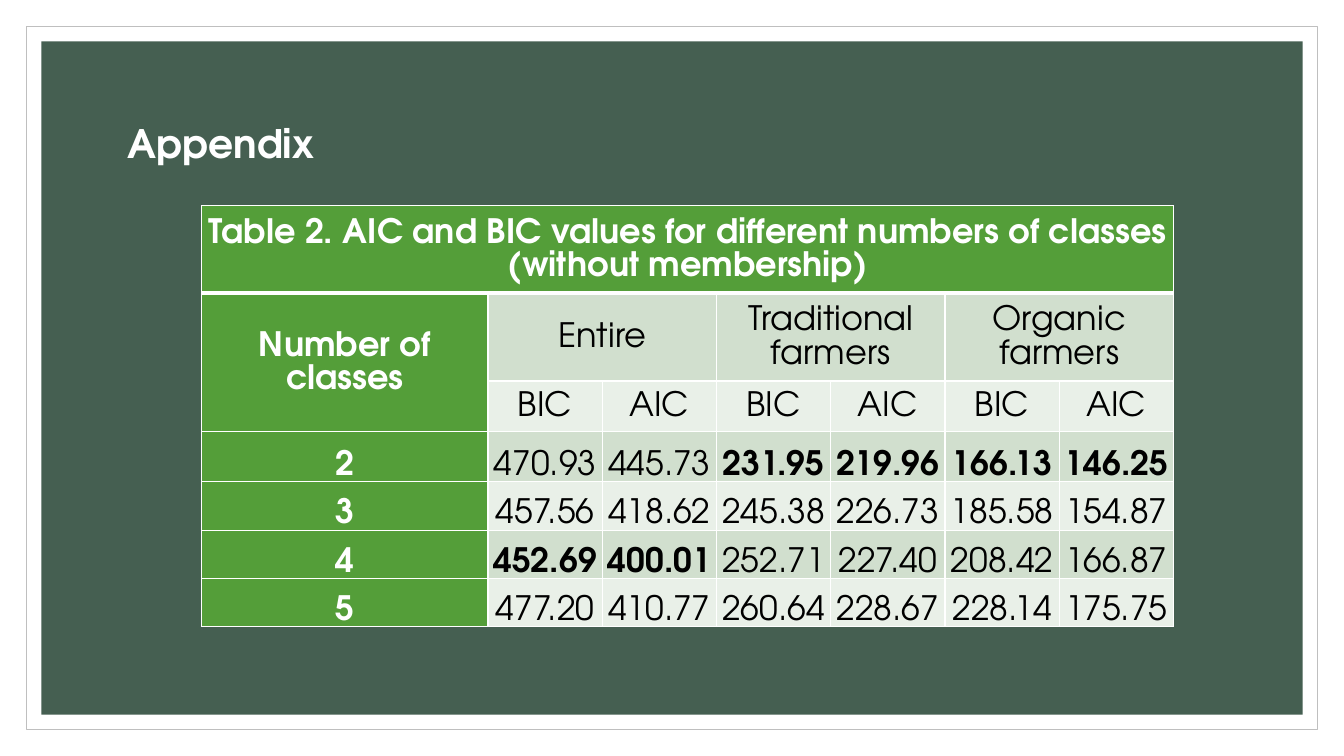
"""Build the appendix slide with the AIC and BIC table."""
from dataclasses import dataclass

from lxml import etree
from pptx import Presentation
from pptx import util as u
from pptx.dml.color import RGBColor
from pptx.enum import shapes, text
from pptx.oxml import ns


@dataclass(frozen=True)
class Theme:
    font: str = "TeX Gyre Adventor"
    white: str = "FFFFFF"
    black: str = "000000"
    frame: str = "BFBFBF"
    panel: str = "455F51"
    head: str = "549E39"
    band_dark: str = "D1DFCE"
    band_light: str = "E9F0E8"
    title_size: int = 28
    table_size: int = 24


theme = Theme()


def write(tf, content, size=theme.table_size, color=theme.black, bold=False,
          align=text.PP_ALIGN.CENTER, spacing=1.07):
    p = tf.paragraphs[0]
    p.alignment = align
    p.line_spacing = spacing
    r = p.add_run()
    r.text = content
    r.font.name = theme.font
    r.font.size = u.Pt(size)
    r.font.bold = bold
    r.font.color.rgb = RGBColor.from_string(color)


def add_border(cell, side, width):
    ln = etree.SubElement(cell._tc.get_or_add_tcPr(), ns.qn(f"a:ln{side}"), w=str(u.Pt(width)))
    fill = etree.SubElement(ln, ns.qn("a:solidFill"))
    etree.SubElement(fill, ns.qn("a:srgbClr"), val=theme.white)


prs = Presentation()
prs.slide_width, prs.slide_height = u.Inches(13.33), u.Inches(7.5)
s = prs.slides.add_slide(prs.slide_layouts[6])

for inset, fill, line in ((0.26, theme.white, theme.frame), (0.41, theme.panel, None)):
    sp = s.shapes.add_shape(shapes.MSO_SHAPE.RECTANGLE, u.Inches(inset), u.Inches(inset),
                            u.Inches(13.33 - 2 * inset), u.Inches(7.5 - 2 * inset))
    sp.shadow.inherit = False
    sp.fill.solid()
    sp.fill.fore_color.rgb = RGBColor.from_string(fill)
    if line:
        sp.line.color.rgb = RGBColor.from_string(line)
        sp.line.width = u.Pt(0.5)
    else:
        sp.line.fill.background()

title = s.shapes.add_textbox(u.Inches(1.17), u.Inches(0.7), u.Inches(11), u.Inches(1.5))
tf = title.text_frame
tf.word_wrap = True
tf.vertical_anchor = text.MSO_ANCHOR.MIDDLE
write(tf, "Appendix", size=theme.title_size, color=theme.white, bold=True,
      align=text.PP_ALIGN.LEFT, spacing=0.9)

values = {
    "2": ["470.93", "445.73", "231.95", "219.96", "166.13", "146.25"],
    "3": ["457.56", "418.62", "245.38", "226.73", "185.58", "154.87"],
    "4": ["452.69", "400.01", "252.71", "227.40", "208.42", "166.87"],
    "5": ["477.20", "410.77", "260.64", "228.67", "228.14", "175.75"],
}
best = [min(column, key=float) for column in zip(*values.values())]
caption = "Table 2. AIC and BIC values for diﬀerent numbers of classes (without membership)"
rows = [
    [caption] + [""] * 6,
    ["Number of classes", "Entire", "", "Traditional farmers", "", "Organic farmers", ""],
    [""] + ["BIC", "AIC"] * 3,
    *([classes, *scores] for classes, scores in values.items()),
]
col_widths = [2.84] + [6.8 / 6] * 6
row_heights = [0.87, 0.87, 0.5, 0.5, 0.48, 0.48, 0.48]

table = s.shapes.add_table(len(rows), len(col_widths), u.Inches(2), u.Inches(2.04),
                           u.Inches(sum(col_widths)), u.Inches(sum(row_heights))).table
for column, width in zip(table.columns, col_widths):
    column.width = u.Inches(width)
for row, height in zip(table.rows, row_heights):
    row.height = u.Inches(height)

for i, row in enumerate(rows):
    for j, content in enumerate(row):
        cell = table.cell(i, j)
        is_head = i == 0 or j == 0
        for side in "LRTB":
            add_border(cell, side, 3 if (i, side) in ((0, "B"), (1, "T")) else 1)
        band = theme.band_dark if i % 2 else theme.band_light
        cell.fill.solid()
        cell.fill.fore_color.rgb = RGBColor.from_string(theme.head if is_head else band)
        cell.margin_left = cell.margin_right = u.Inches(0.05)
        cell.margin_top = cell.margin_bottom = 0
        cell.vertical_anchor = text.MSO_ANCHOR.MIDDLE if i < 3 else text.MSO_ANCHOR.BOTTOM
        is_best = i > 2 and j > 0 and content == best[j - 1]
        if content:
            write(cell.text_frame, content, color=theme.white if is_head else theme.black,
                  bold=is_head or is_best)

table.cell(0, 0).merge(table.cell(0, 6))
table.cell(1, 0).merge(table.cell(2, 0))
for j in (1, 3, 5):
    table.cell(1, j).merge(table.cell(1, j + 1))

prs.save("out.pptx")
